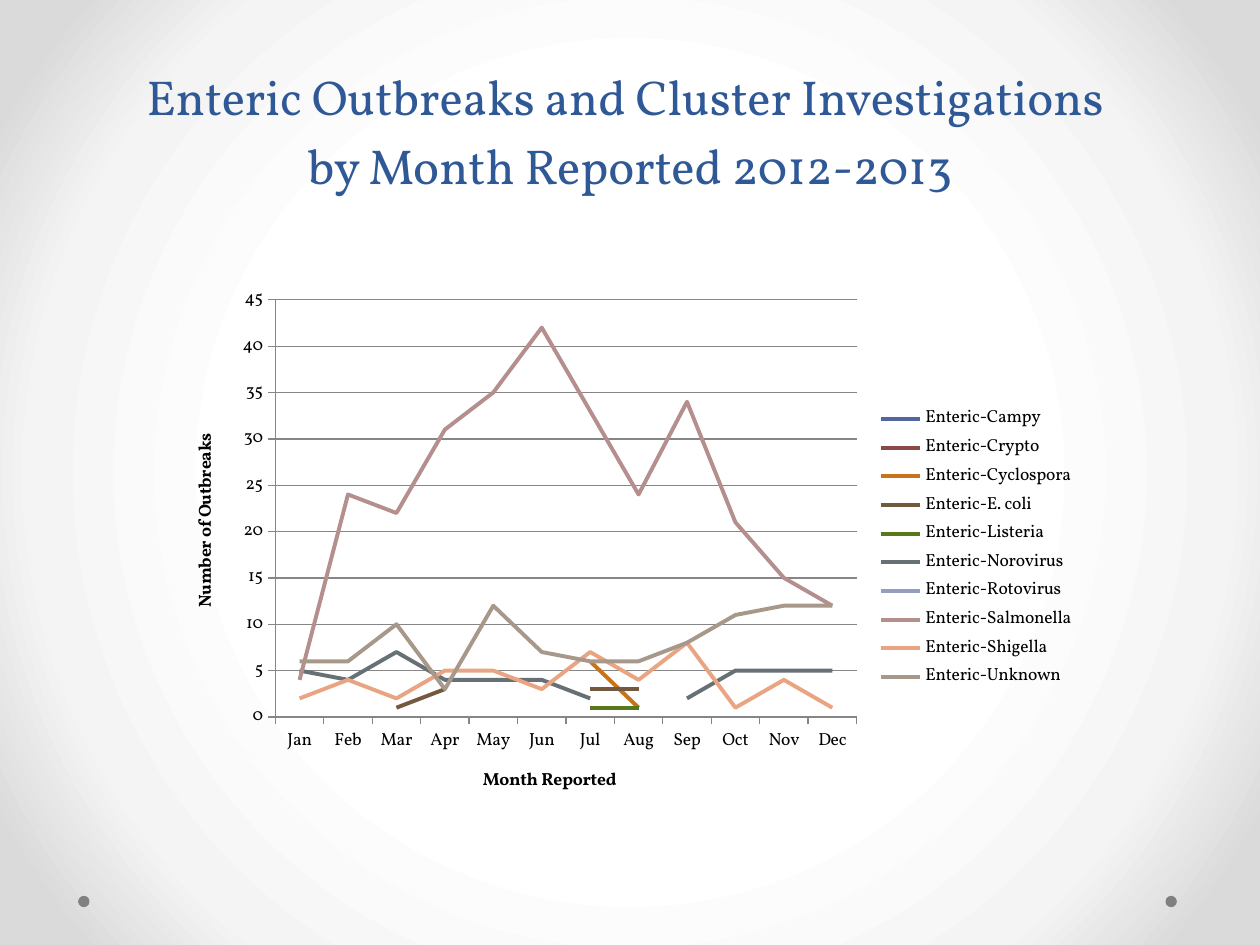
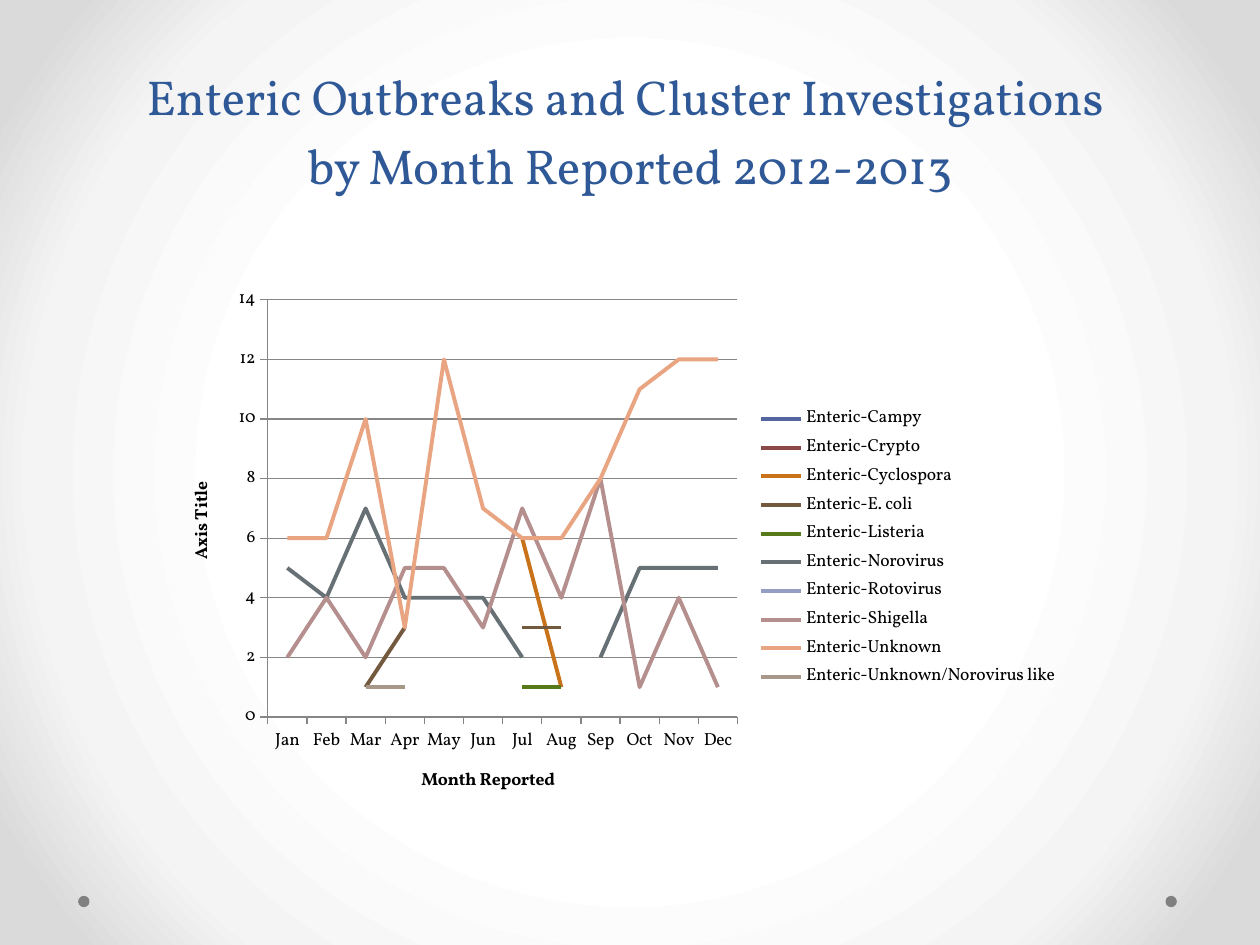
from dataclasses import dataclass

import pptx
import pptx.chart.data
import pptx.dml.color
import pptx.enum.chart
import pptx.enum.shapes
import pptx.enum.text
import pptx.oxml
import pptx.oxml.ns
import pptx.util
from pptx.util import Inches


@dataclass(frozen=True)
class Theme:
    font: str = "Vollkorn"
    heading: str = "2F5897"
    ink: str = "000000"
    grid: str = "868686"
    dot: str = "808080"
    backdrop: tuple = ((50, "FFFFFF"), (76, "F4F4F4"), (92, "DADADA"))
    series: tuple = ("5366A0", "8A4848", "C87219", "73593E", "57791A",
                     "667075", "949DC3", "B58E8E", "E9A582", "A8988A")
    heading_size: int = 28
    heading_leading: int = 39
    chart_size: int = 10
    series_width: float = 2.25
    grid_width: float = 0.75


MONTHS = ("Jan", "Feb", "Mar", "Apr", "May", "Jun",
          "Jul", "Aug", "Sep", "Oct", "Nov", "Dec")
HEADING = "Enteric Outbreaks and Cluster Investigations \vby Month Reported 2012-2013"


def by_month(**counts):
    return [counts.get(month) for month in MONTHS]


OUTBREAKS = {
    "Campy": by_month(),
    "Crypto": by_month(),
    "Cyclospora": by_month(Jul=6, Aug=1),
    "E. coli": by_month(Mar=1, Apr=3, Jul=3, Aug=3),
    "Listeria": by_month(Jul=1, Aug=1),
    "Norovirus": [5, 4, 7, 4, 4, 4, 2, None, 2, 5, 5, 5],
    "Rotovirus": by_month(),
    "Salmonella": [4, 24, 22, 31, 35, 42, 33, 24, 34, 21, 15, 12],
    "Shigella": [2, 4, 2, 5, 5, 3, 7, 4, 8, 1, 4, 1],
    "Unknown": [6, 6, 10, 3, 12, 7, 6, 6, 8, 11, 12, 12],
    "Unknown/Norovirus like": by_month(Mar=1, Apr=1),
}


def rgb(color):
    return pptx.dml.color.RGBColor.from_string(color)


def style_font(font, name, size, color, bold=False):
    font.name = name
    font.size = pptx.util.Pt(size)
    font.color.rgb = rgb(color)
    font.bold = bold


def write(frame, text, leading=None, **style):
    frame.text = text
    paragraph = frame.paragraphs[0]
    paragraph.alignment = pptx.enum.text.PP_ALIGN.CENTER
    if leading:
        paragraph.line_spacing = pptx.util.Pt(leading)
    for run in paragraph.runs:
        style_font(run.font, **style)


class Deck:
    def __init__(self, theme):
        self.theme = theme
        self.presentation = pptx.Presentation()
        self.presentation.slide_width = Inches(10)
        self.presentation.slide_height = Inches(7.5)
        self.master = self.presentation.slide_master
        self.slide = None

    def new_slide(self):
        layout = self.presentation.slide_layouts[5]
        self.slide = self.presentation.slides.add_slide(layout)

    def backdrop(self):
        self.master.background.fill.solid()
        background = self.master.element.find(".//" + pptx.oxml.ns.qn("p:bgPr"))
        stops = "".join(
            f'<a:gs pos="{position * 1000}"><a:srgbClr val="{color}"/></a:gs>'
            for position, color in self.theme.backdrop)
        background.replace(background[0], pptx.oxml.parse_xml(
            f'<a:gradFill {pptx.oxml.ns.nsdecls("a")} rotWithShape="1">'
            f'<a:gsLst>{stops}</a:gsLst><a:path path="circle">'
            '<a:fillToRect l="50000" t="50000" r="50000" b="50000"/>'
            '</a:path></a:gradFill>'))

    def master_dot(self, left, top, size):
        dot = self.slide.shapes.add_shape(
            pptx.enum.shapes.MSO_SHAPE.OVAL,
            Inches(left), Inches(top), Inches(size), Inches(size))
        dot.shadow.inherit = False
        dot.fill.solid()
        dot.fill.fore_color.rgb = rgb(self.theme.dot)
        dot.line.fill.background()
        tree = self.master.element.find(".//" + pptx.oxml.ns.qn("p:spTree"))
        identity = dot.element.find(".//" + pptx.oxml.ns.qn("p:cNvPr"))
        identity.set("id", str(100 + len(tree)))
        tree.append(dot.element)

    def heading(self, text):
        heading = self.slide.shapes.title
        heading.left, heading.top = Inches(0.5), Inches(0.42)
        heading.width, heading.height = Inches(9), Inches(1.17)
        frame = heading.text_frame
        frame.word_wrap = True
        frame.auto_size = pptx.enum.text.MSO_AUTO_SIZE.NONE
        frame.vertical_anchor = pptx.enum.text.MSO_ANCHOR.BOTTOM
        write(frame, text, leading=self.theme.heading_leading, name=self.theme.font,
              size=self.theme.heading_size, color=self.theme.heading)

    def rule(self, line):
        line.color.rgb = rgb(self.theme.grid)
        line.width = pptx.util.Pt(self.theme.grid_width)

    def axis(self, axis, title):
        axis.major_tick_mark = pptx.enum.chart.XL_TICK_MARK.OUTSIDE
        axis.minor_tick_mark = pptx.enum.chart.XL_TICK_MARK.NONE
        self.rule(axis.format.line)
        write(axis.axis_title.text_frame, title, name=self.theme.font,
              size=self.theme.chart_size, color=self.theme.ink, bold=True)

    def line_chart(self, left, width, agents, count_title, maximum, step):
        data = pptx.chart.data.CategoryChartData()
        data.categories = MONTHS
        for agent in agents:
            data.add_series(f"Enteric-{agent}", OUTBREAKS[agent])
        chart = self.slide.shapes.add_chart(
            pptx.enum.chart.XL_CHART_TYPE.LINE, Inches(left), Inches(2.2),
            Inches(width), Inches(4.3), data).chart
        chart.has_title = False
        style_font(chart.font, self.theme.font, self.theme.chart_size, self.theme.ink)
        chart.has_legend = True
        chart.legend.position = pptx.enum.chart.XL_LEGEND_POSITION.RIGHT
        chart.legend.include_in_layout = False
        self.axis(chart.category_axis, "Month Reported")
        counts = chart.value_axis
        self.axis(counts, count_title)
        counts.minimum_scale, counts.maximum_scale = 0, maximum
        counts.major_unit = step
        counts.has_major_gridlines = True
        self.rule(counts.major_gridlines.format.line)
        chart.plots[0].vary_by_categories = False
        for series, color in zip(chart.plots[0].series, self.theme.series):
            series.smooth = False
            series.format.line.color.rgb = rgb(color)
            series.format.line.width = pptx.util.Pt(self.theme.series_width)


def main():
    deck = Deck(Theme())
    deck.backdrop()

    deck.new_slide()
    for left in (9.25, 0.62):
        deck.master_dot(left, 7.11, 0.09)
    deck.heading(HEADING)
    with_salmonella = [agent for agent in OUTBREAKS if agent != "Unknown/Norovirus like"]
    deck.line_chart(1.33, 7.3, with_salmonella, "Number of Outbreaks", 45, 5)

    deck.new_slide()
    deck.heading(HEADING)
    without_salmonella = [agent for agent in OUTBREAKS if agent != "Salmonella"]
    deck.line_chart(1.3, 7.2, without_salmonella, "Axis Title", 14, 2)

    deck.presentation.save("out.pptx")


if __name__ == "__main__":
    main()
